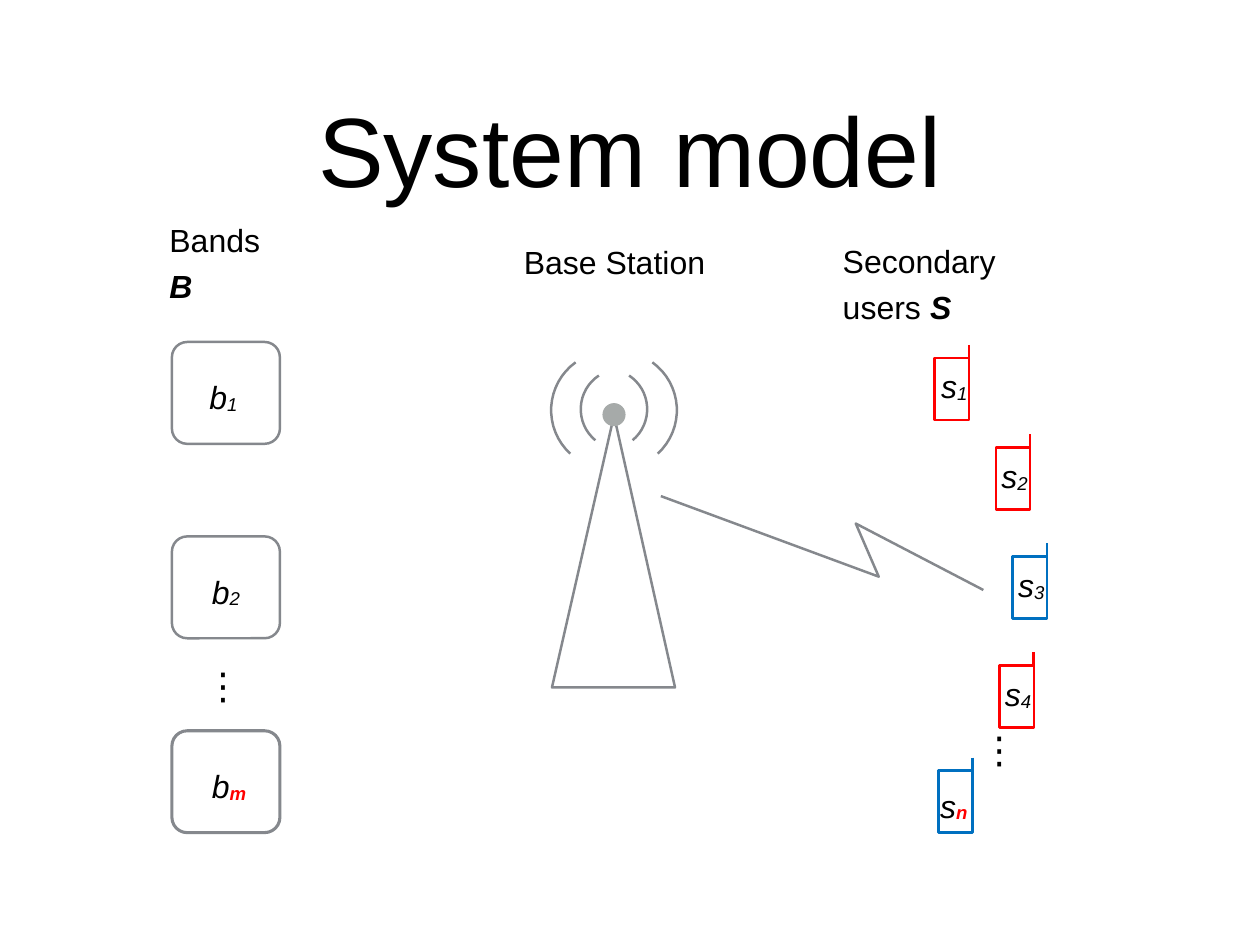
"""Build the "System model" slide: bands, a base station and secondary users."""
from dataclasses import dataclass
from math import cos, radians, sin

from lxml import etree
from pptx import Presentation
from pptx.dml.color import RGBColor
from pptx.enum.shapes import MSO_CONNECTOR, MSO_SHAPE
from pptx.enum.text import MSO_ANCHOR, MSO_AUTO_SIZE, PP_ALIGN
from pptx.oxml.ns import qn
from pptx.shapes.base import BaseShape
from pptx.shapes.connector import Connector
from pptx.shapes.shapetree import GroupShapes, SlideShapes
from pptx.text.text import TextFrame
from pptx.util import Pt

RECTANGLE = MSO_SHAPE.RECTANGLE
ROUNDED = MSO_SHAPE.ROUNDED_RECTANGLE
OVAL = MSO_SHAPE.OVAL
STRAIGHT = MSO_CONNECTOR.STRAIGHT
MIDDLE = MSO_ANCHOR.MIDDLE
FIXED = MSO_AUTO_SIZE.NONE
LEFT, CENTER = PP_ALIGN.LEFT, PP_ALIGN.CENTER

Shapes = SlideShapes | GroupShapes
Point = tuple[float, float]


@dataclass(frozen=True)
class Theme:
    font: str = "Arial"
    ink: RGBColor = RGBColor(0x00, 0x00, 0x00)
    outline: RGBColor = RGBColor(0x85, 0x88, 0x8D)
    beacon: RGBColor = RGBColor(0xA6, 0xAA, 0xA9)
    red: RGBColor = RGBColor(0xFF, 0x00, 0x00)
    blue: RGBColor = RGBColor(0x00, 0x70, 0xC0)
    title: float = 80
    label: float = 26
    dots: float = 30
    inset: float = 4.5
    thin: float = 2
    thick: float = 2.5


THEME = Theme()


@dataclass(frozen=True)
class Box:
    left: float
    top: float
    width: float
    height: float

    def lengths(self) -> tuple[Pt, Pt, Pt, Pt]:
        return Pt(self.left), Pt(self.top), Pt(self.width), Pt(self.height)


@dataclass(frozen=True)
class Band:
    index: str
    label_dx: float = 28
    last: bool = False


@dataclass(frozen=True)
class User:
    index: str
    left: float
    top: float
    color: RGBColor
    label_dx: float = 0
    label_dy: float = -1.5
    last: bool = False


@dataclass(frozen=True)
class Wave:
    offset: float
    center_y: float
    radius: float
    above: float
    below: float


BANDS = (Band("1", label_dx=26), Band("2"), Band("m", last=True))
BAND_LEFT, BAND_TOP, BAND_STEP = 139.7, 277.9, 158
USERS = (
    User("1", 759.6, 290.9, THEME.red, label_dx=0.7),
    User("2", 809.3, 363.6, THEME.red),
    User("3", 823, 452.2, THEME.blue),
    User("4", 812.2, 540.7, THEME.red),
    User("n", 762.5, 626.4, THEME.blue, label_dx=-2.9, label_dy=3.6, last=True),
)
PHONE_WIDTH, PHONE_HEIGHT, ANTENNA = 28, 50.4, 10.6
MAST_X = 499
WAVES = (Wave(-5.8, 332.6, 32.8, 56.6, 50.3), Wave(3.2, 333.4, 47.9, 54.3, 47.5))
WAVE_STEPS = 16
SIGNAL = ((799.2, 479.5), (695.5, 425.5), (714.2, 468.7), (537.1, 403.2))


def write(frame: TextFrame, text: str, *, size: float = THEME.label,
          color: RGBColor = THEME.ink, bold: bool = False, italic: bool = False,
          subscript: bool = False, align: PP_ALIGN = LEFT, spacing: float = 1.2) -> None:
    paragraph = frame.paragraphs[0]
    paragraph.alignment = align
    paragraph.line_spacing = spacing
    run = paragraph.add_run()
    run.text = text
    font = run.font
    font.name, font.size, font.color.rgb = THEME.font, Pt(size), color
    font.bold, font.italic = bold, italic
    if subscript:
        run._r.get_or_add_rPr().set("baseline", "-6000")


def format_frame(frame: TextFrame, wrap: bool) -> TextFrame:
    frame.auto_size, frame.word_wrap, frame.vertical_anchor = FIXED, wrap, MIDDLE
    frame.margin_left = frame.margin_right = Pt(THEME.inset)
    frame.margin_top = frame.margin_bottom = Pt(THEME.inset)
    return frame


def add_label(shapes: Shapes, box: Box, wrap: bool = False) -> TextFrame:
    return format_frame(shapes.add_textbox(*box.lengths()).text_frame, wrap)


def add_symbol(shapes: Shapes, box: Box, letter: str, index: str, last: bool) -> None:
    symbol = add_label(shapes, box, wrap=last)
    write(symbol, letter, italic=True)
    write(symbol, index, italic=True, bold=last, subscript=True,
          color=THEME.red if last else THEME.ink)


def add_dots(shapes: Shapes, left: float, top: float) -> None:
    dots = add_label(shapes, Box(left, top, 21.6, 36.7))
    write(dots, "⋮", size=THEME.dots, align=CENTER, spacing=1)


def stroke(shape: BaseShape | Connector, color: RGBColor, width: float) -> None:
    shape.line.color.rgb = color
    shape.line.width = Pt(width)


def add_outline(shapes: Shapes, kind: MSO_SHAPE, box: Box, color: RGBColor,
                width: float) -> BaseShape:
    shape = shapes.add_shape(kind, *box.lengths())
    shape.shadow.inherit = False
    shape.fill.background()
    stroke(shape, color, width)
    return shape


def add_path(shapes: Shapes, points: list[Point], close: bool = False) -> None:
    start, *rest = [(Pt(x), Pt(y)) for x, y in points]
    builder = shapes.build_freeform(*start)
    builder.add_line_segments(rest, close=close)
    path = builder.convert_to_shape()
    path.shadow.inherit = False
    path.fill.background()
    stroke(path, THEME.outline, THEME.thin)


def add_wave(shapes: Shapes, wave: Wave, side: int) -> None:
    sweep = wave.above + wave.below
    angles = [radians(-wave.above + sweep * step / WAVE_STEPS)
              for step in range(WAVE_STEPS + 1)]
    add_path(shapes, [(MAST_X + side * (wave.offset + wave.radius * cos(angle)),
                       wave.center_y + wave.radius * sin(angle)) for angle in angles])


def add_base_station(shapes: Shapes) -> None:
    add_path(shapes, [(MAST_X, 337.7), (548.6, 558.7), (448.6, 558.7)], close=True)
    beacon = shapes.add_shape(OVAL, *Box(MAST_X - 9.4, 327.6, 18.8, 18.8).lengths())
    beacon.shadow.inherit = False
    beacon.fill.solid()
    beacon.fill.fore_color.rgb = THEME.beacon
    beacon.line.fill.background()
    for side in (1, -1):
        side_waves = shapes.add_group_shape().shapes
        for wave in WAVES:
            add_wave(side_waves, wave, side)


def add_band(shapes: Shapes, band: Band, top: float) -> None:
    block = add_outline(shapes, ROUNDED, Box(BAND_LEFT, top, 87.8, 82.8),
                        THEME.outline, THEME.thick if band.last else THEME.thin)
    block.adjustments[0] = 0.15
    label = Box(BAND_LEFT + band.label_dx, top + 20.2, 59 if band.last else 33.8, 42.5)
    add_symbol(shapes, label, "b", band.index, band.last)


def add_user(shapes: Shapes, user: User) -> None:
    phone = shapes.add_group_shape().shapes
    width = THEME.thick if user.last else THEME.thin
    add_outline(phone, RECTANGLE, Box(user.left, user.top, PHONE_WIDTH, PHONE_HEIGHT),
                user.color, width)
    antenna_x = Pt(user.left + PHONE_WIDTH - 0.3)
    antenna = phone.add_connector(STRAIGHT, antenna_x, Pt(user.top - ANTENNA),
                                  antenna_x, Pt(user.top))
    stroke(antenna, user.color, width)
    etree.SubElement(antenna._element.spPr, qn("a:effectLst"))
    label = Box(user.left + user.label_dx, user.top + user.label_dy,
                46 if user.last else 31, 42.5)
    add_symbol(shapes, label, "s", user.index, user.last)


def main() -> None:
    deck = Presentation()
    deck.slide_width, deck.slide_height = Pt(1024), Pt(768)
    slide = deck.slides.add_slide(deck.slide_layouts[5])
    shapes = slide.shapes
    title = shapes.title
    title.left, title.top, title.width, title.height = Box(75, 35.3, 874, 170).lengths()
    write(format_frame(title.text_frame, True), "System model",
          size=THEME.title, align=CENTER, spacing=1)
    add_base_station(shapes)
    write(add_label(shapes, Box(421.2, 188, 155.5, 42.5)), "Base Station")
    users_heading = add_label(shapes, Box(680.4, 186.5, 136.8, 81.4), wrap=True)
    write(users_heading, "Secondary users ")
    write(users_heading, "S", bold=True, italic=True)
    bands_heading = add_label(shapes, Box(133.2, 190, 98, 40.3), wrap=True)
    write(bands_heading, "Bands ")
    write(bands_heading, "B", bold=True, italic=True)
    for user in USERS:
        add_user(shapes, user)
    for row, band in enumerate(BANDS):
        add_band(shapes, band, BAND_TOP + row * BAND_STEP)
    add_dots(shapes, 801.4, 590.4)
    add_dots(shapes, 170.6, 537.8)
    add_path(shapes, SIGNAL)
    deck.save("out.pptx")


if __name__ == "__main__":
    main()
